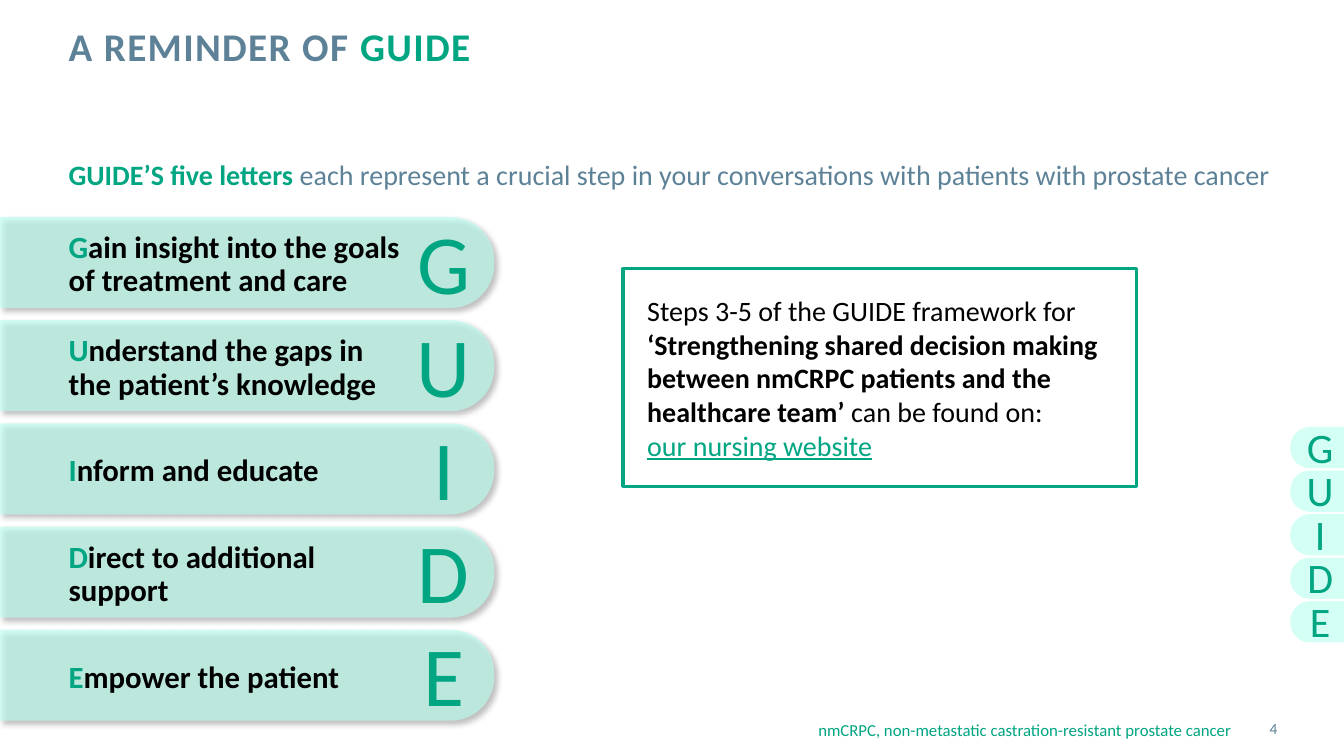
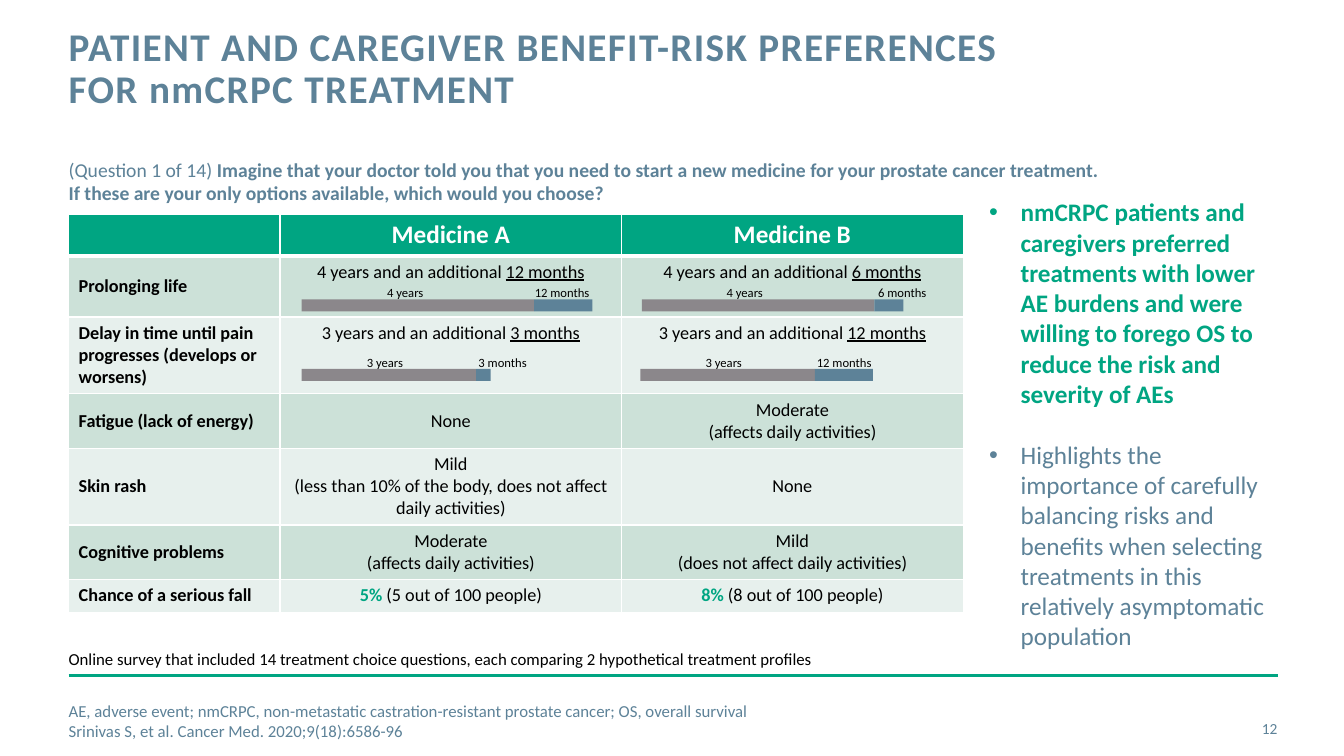
from dataclasses import dataclass
from typing import NamedTuple

from pptx import Presentation
from pptx.dml.color import RGBColor
from pptx.enum import shapes, text
from pptx.oxml import parse_xml
from pptx.oxml.ns import nsdecls, qn
from pptx.oxml.xmlchemy import OxmlElement
from pptx.util import Pt

COLORS = {
    "green": "00A582", "slate": "5D8298", "mint": "BAFFF0", "gray": "8B878B",
    "black": "000000", "white": "FFFFFF", "sage": "CCE1D8", "pale": "E7F0ED",
}
FONT = "Calibri"
MARGIN = 49
PT_PER_MONTH = 3.46
LEFT, CENTER, RIGHT = text.PP_ALIGN.LEFT, text.PP_ALIGN.CENTER, text.PP_ALIGN.RIGHT
TOP, MIDDLE = text.MSO_ANCHOR.TOP, text.MSO_ANCHOR.MIDDLE


class Run(NamedTuple):
    text: str
    color: str = "black"
    bold: bool = False
    underline: bool = False


class Box(NamedTuple):
    left: float
    top: float
    width: float
    height: float

    def lengths(self) -> list:
        return [Pt(v) for v in self]


@dataclass
class Step:
    letter: str
    rest: str


@dataclass
class Timeline:
    left: float
    top: float
    years: int
    months: int
    years_center: float
    months_center: float


STEPS = [
    Step("G", "ain insight into the goals\nof treatment and care"),
    Step("U", "nderstand the gaps in\nthe patient’s knowledge"),
    Step("I", "nform and educate"),
    Step("D", "irect to additional\nsupport"),
    Step("E", "mpower the patient"),
]
TIMELINES = [
    Timeline(215.5, 213.8, 4, 12, 289.5, 401.5),
    Timeline(458.5, 213.8, 4, 6, 532, 644.5),
    Timeline(215.5, 263.5, 3, 3, 275, 359),
    Timeline(457.5, 263.5, 3, 12, 517, 603),
]


def rgb(name: str) -> RGBColor:
    return RGBColor.from_string(COLORS[name])


def add_runs(p, runs: list[Run], size: float, align=LEFT) -> None:
    p.alignment = align
    for run in runs:
        for i, part in enumerate(run.text.split("\n")):
            if i:
                p.add_line_break()
            r = p.add_run()
            r.text = part
            font = r.font
            font.name, font.size = FONT, Pt(size)
            font.bold, font.underline = run.bold, run.underline
            font.color.rgb = rgb(run.color)


def set_frame(tf, anchor=TOP, insets=(0, 0, 0, 0), wrap: bool = True) -> None:
    tf.word_wrap = wrap
    tf.auto_size = text.MSO_AUTO_SIZE.NONE
    tf.vertical_anchor = anchor
    tf.margin_left, tf.margin_top, tf.margin_right, tf.margin_bottom = map(Pt, insets)


def add_text(s, box: Box, paragraphs: list[list[Run]], size: float,
             align=LEFT, anchor=TOP, wrap: bool = True):
    tf = s.shapes.add_textbox(*box.lengths()).text_frame
    set_frame(tf, anchor, wrap=wrap)
    for i, runs in enumerate(paragraphs):
        add_runs(tf.add_paragraph() if i else tf.paragraphs[0], runs, size, align)
    return tf


def add_shape(s, kind, box: Box, fill: str):
    sp = s.shapes.add_shape(kind, *box.lengths())
    sp.shadow.inherit = False
    sp.fill.solid()
    sp.fill.fore_color.rgb = rgb(fill)
    sp.line.fill.background()
    return sp


def add_tab(s, box: Box, rotation: int, shadow: bool = False) -> None:
    shift = (box.width - box.height) / 2
    upright = Box(box.left + shift, box.top - shift, box.height, box.width)
    sp = add_shape(s, shapes.MSO_SHAPE.ROUND_2_SAME_RECTANGLE, upright, "mint")
    sp.rotation = rotation
    sp.adjustments[0], sp.adjustments[1] = 0.477, 0
    alpha = OxmlElement("a:alpha")
    alpha.set("val", "62000")
    sp.fill._xPr.find(qn("a:solidFill"))[0].append(alpha)
    if shadow:
        sp._element.spPr.find(qn("a:effectLst")).append(parse_xml(
            f'<a:outerShdw {nsdecls("a")} blurRad="{Pt(4)}" dist="{Pt(3)}" '
            'dir="2700000" algn="tl" rotWithShape="0">'
            f'<a:srgbClr val="{COLORS["black"]}"><a:alpha val="40000"/></a:srgbClr>'
            '</a:outerShdw>'))


def add_slide(prs, title: list[Run], number: int):
    s = prs.slides.add_slide(prs.slide_layouts[5])
    sp = s.shapes.title
    sp.left, sp.top, sp.width, sp.height = Box(MARGIN, 19.5, 688, 63).lengths()
    set_frame(sp.text_frame)
    p = sp.text_frame.paragraphs[0]
    add_runs(p, title, 28)
    p.line_spacing = Pt(30)
    for r in p.runs:
        r.font._element.set("spc", "100")
    add_text(s, Box(850, 506, 62.5, 29), [[Run(str(number), "slate")]], 11, RIGHT, MIDDLE)
    return s


def add_step(s, step: Step, index: int) -> None:
    top = 155 + 73.7 * index
    add_tab(s, Box(0, top, 353, 65), 90, shadow=True)
    add_text(s, Box(290, top - 5, 54, 73), [[Run(step.letter, "green")]], 60, CENTER, wrap=False)
    tf = add_text(s, Box(MARGIN, top + 2, 262, 65),
                  [[Run(step.letter, "green", True), Run(step.rest, bold=True)]], 22, anchor=MIDDLE)
    tf.paragraphs[0].line_spacing = 0.9
    top = 305 + 31.1 * index
    add_tab(s, Box(921.6, top, 38.4, 29.5), 270)
    add_text(s, Box(931, top - 4, 24, 36), [[Run(step.letter, "green")]], 30, CENTER, wrap=False)


def add_timeline(s, line: Timeline) -> None:
    base, extra = line.years * 12 * PT_PER_MONTH, line.months * PT_PER_MONTH
    for left, width, color, label, center in (
        (line.left, base, "gray", f"{line.years} years", line.years_center),
        (line.left + base, extra, "slate", f"{line.months} months", line.months_center),
    ):
        add_shape(s, shapes.MSO_SHAPE.RECTANGLE, Box(left, line.top, width, 8.6), color)
        add_text(s, Box(center - 22, line.top - 10, 44, 11), [[Run(label)]], 9, CENTER, wrap=False)


def set_borders(cell, bottom: float) -> None:
    tcPr = cell._tc.get_or_add_tcPr()
    for i, (side, width) in enumerate((("L", 1), ("R", 1), ("T", 1), ("B", bottom))):
        tcPr.insert(i, parse_xml(
            f'<a:ln{side} {nsdecls("a")} w="{Pt(width)}"><a:solidFill>'
            f'<a:srgbClr val="{COLORS["white"]}"/></a:solidFill></a:ln{side}>'))


def duration(years: int, months: int) -> list[Run]:
    return [Run(f"{years} years and an additional "), Run(f"{months} months", underline=True)]


def chance(percent: int) -> list[Run]:
    return [Run(f"{percent}%", "green", True), Run(f" ({percent} out of 100 people)")]


def add_preferences(s) -> None:
    moderate = [Run("Moderate\n(affects daily activities)")]
    none = [Run("None")]
    rows = [
        (29.2, "", [Run("Medicine A", "white", True)], [Run("Medicine B", "white", True)]),
        (43.8, "Prolonging life", duration(4, 12), duration(4, 6)),
        (54.4, "Delay in time until pain progresses (develops or worsens)",
         duration(3, 3), duration(3, 12)),
        (38.6, "Fatigue (lack of energy)", none, moderate),
        (54.4, "Skin rash",
         [Run("Mild\n(less than 10% of the body, does not affect daily activities)")], none),
        (38.6, "Cognitive problems", moderate, [Run("Mild\n(does not affect daily activities)")]),
        (23.4, "Chance of a serious fall", chance(5), chance(8)),
    ]
    box = Box(MARGIN, 153.5, 639, sum(row[0] for row in rows))
    table = s.shapes.add_table(len(rows), 3, *box.lengths()).table
    table.first_row = table.horz_banding = False
    for column, width in zip(table.columns, (151, 244, 244)):
        column.width = Pt(width)
    for i, (height, label, *options) in enumerate(rows):
        table.rows[i].height = Pt(height)
        for j, runs in enumerate([[Run(label, bold=True)] if label else [], *options]):
            cell = table.cell(i, j)
            cell.margin_top = cell.margin_bottom = Pt(3.6)
            cell.vertical_anchor = MIDDLE if j == 0 or runs == none else TOP
            cell.fill.solid()
            cell.fill.fore_color.rgb = rgb("green" if i == 0 else "sage" if i % 2 else "pale")
            set_borders(cell, 1 if i else 3)
            add_runs(cell.text_frame.paragraphs[0], runs, 13 if i else 18, CENTER if j else LEFT)


def add_findings(s) -> None:
    tf = add_text(s, Box(706.5, 140.5, 197.5, 330), [
        [Run("nmCRPC patients and caregivers preferred treatments with lower AE burdens "
             "and were willing to forego OS to reduce the risk and severity of AEs", "green", True)],
        [Run("Highlights the importance of carefully balancing risks and benefits when "
             "selecting treatments in this relatively asymptomatic population", "slate")],
    ], 18)
    for p in tf.paragraphs:
        pPr = p._p.get_or_add_pPr()
        pPr.set("marL", str(Pt(22.5)))
        pPr.set("indent", str(-Pt(22.5)))
        pPr.append(parse_xml(f'<a:buFont {nsdecls("a")} typeface="Arial"/>'))
        pPr.append(parse_xml(f'<a:buChar {nsdecls("a")} char="•"/>'))
    tf.paragraphs[1].space_before = Pt(22)


def build_reminder(prs) -> None:
    s = add_slide(prs, [Run("A REMINDER OF ", "slate", True), Run("GUIDE", "green", True)], 4)
    add_text(s, Box(MARGIN, 112.5, 880, 30), [[
        Run("GUIDE’S five letters ", "green", True),
        Run("each represent a crucial step in your conversations with patients "
            "with prostate cancer", "slate")]], 20)
    sp = add_shape(s, shapes.MSO_SHAPE.RECTANGLE, Box(445, 192, 367, 155.5), "white")
    sp.line.color.rgb = rgb("green")
    sp.line.width = Pt(2.25)
    set_frame(sp.text_frame, MIDDLE, (17.3, 3.6, 7.2, 3.6))
    add_runs(sp.text_frame.paragraphs[0], [
        Run("Steps 3-5 of the GUIDE framework for "),
        Run("‘Strengthening shared decision making between nmCRPC patients "
            "and the healthcare team’ ", bold=True),
        Run("can be found on:\n"),
        Run("our nursing website", "green", underline=True)], 20)
    for i, step in enumerate(STEPS):
        add_step(s, step, i)
    add_text(s, Box(584.5, 514, 310, 15), [[
        Run("nmCRPC, non-metastatic castration-resistant prostate cancer", "green")]],
        12, anchor=MIDDLE)


def build_preferences(prs) -> None:
    s = add_slide(prs, [Run("PATIENT AND CAREGIVER BENEFIT-RISK PREFERENCES "
                            "FOR nmCRPC TREATMENT", "slate", True)], 12)
    rule = s.shapes.add_connector(shapes.MSO_CONNECTOR.STRAIGHT,
                                  Pt(MARGIN), Pt(482.5), Pt(913), Pt(482.5))
    rule.line.color.rgb = rgb("green")
    rule.line.width = Pt(2)
    rule._element.spPr.append(OxmlElement("a:effectLst"))
    add_text(s, Box(MARGIN, 112.5, 863, 36), [[
        Run("(Question 1 of 14) ", "slate"),
        Run("Imagine that your doctor told you that you need to start a new medicine for your "
            "prostate cancer treatment.\nIf these are your only options available, "
            "which would you choose?", "slate", True)]], 14)
    add_preferences(s)
    for line in TIMELINES:
        add_timeline(s, line)
    add_findings(s)
    add_text(s, Box(MARGIN, 463.5, 560, 16), [[
        Run("Online survey that included 14 treatment choice questions, "
            "each comparing 2 hypothetical treatment profiles")]], 12)
    add_text(s, Box(MARGIN, 500.5, 639, 29), [
        [Run("AE, adverse event; nmCRPC, non-metastatic castration-resistant prostate cancer; "
             "OS, overall survival", "slate")],
        [Run("Srinivas S, et al. Cancer Med. 2020;9(18):6586-96", "slate")]], 12, anchor=MIDDLE)


def main() -> None:
    prs = Presentation()
    prs.slide_width, prs.slide_height = Pt(960), Pt(540)
    build_reminder(prs)
    build_preferences(prs)
    prs.save("out.pptx")


if __name__ == "__main__":
    main()
